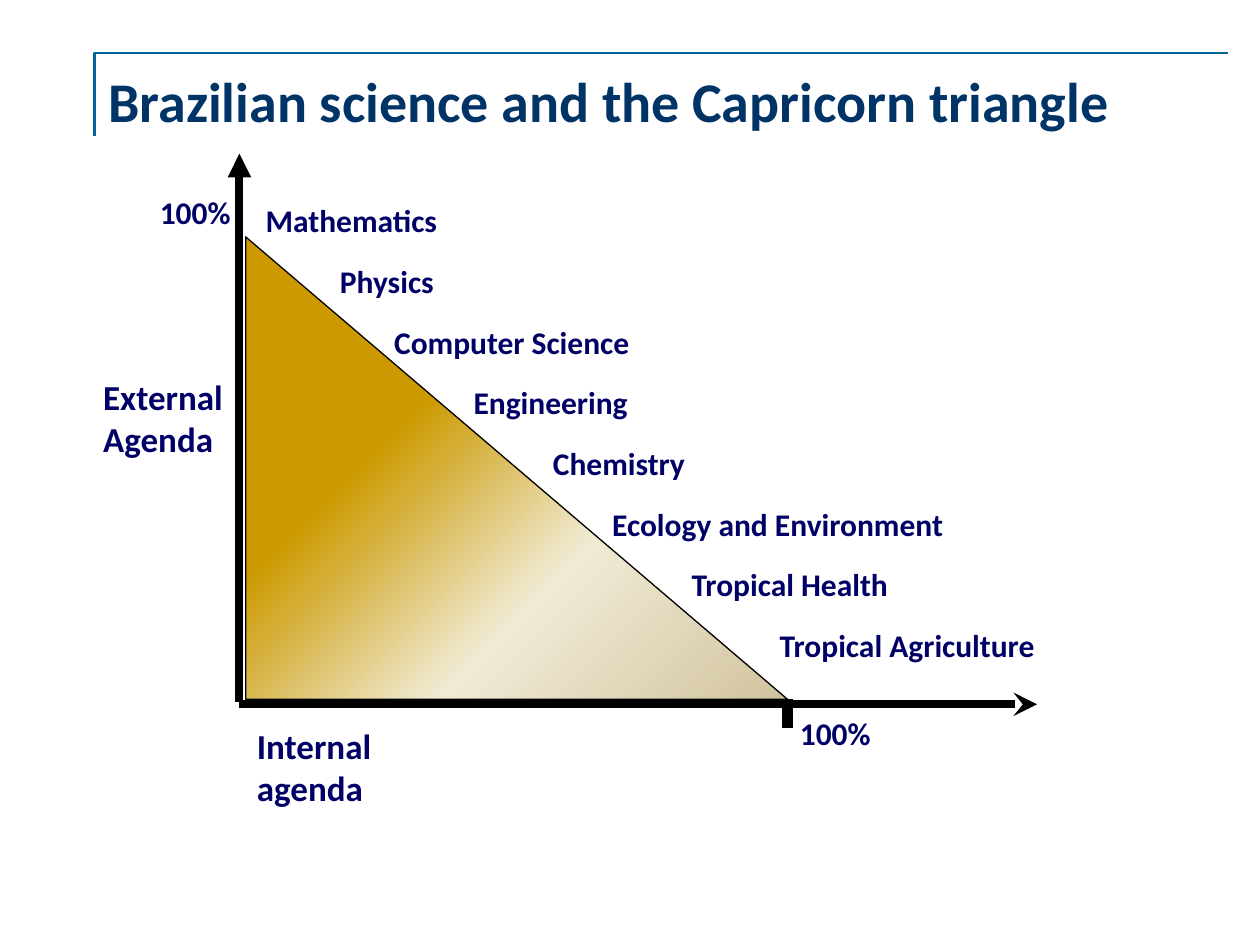
from lxml.etree import SubElement
from pptx import Presentation
from pptx.dml.color import RGBColor
from pptx.enum.shapes import MSO_CONNECTOR, MSO_SHAPE
from pptx.enum.text import MSO_ANCHOR, MSO_AUTO_SIZE, PP_ALIGN
from pptx.oxml.ns import qn
from pptx.util import Inches, Pt

COLORS = {
    "title": "003366",
    "frame": "006699",
    "label": "000066",
    "axis": "000000",
    "gold": "CC9900",
    "cream": "F0EBD5",
    "sand": "D1C39F",
}
GRADIENT = [(0, "gold"), (34, "gold"), (65, "cream"), (100, "sand")]
FIELDS = [
    ("Mathematics", 0.11, 1.58),
    ("Physics", 0.7, 0.96),
    ("Computer Science", 1.13, 2.1),
    ("Engineering", 1.76, 1.45),
    ("Chemistry", 2.39, 1.27),
    ("Ecology and Environment", 2.86, 2.87),
    ("Tropical Health", 3.49, 1.8),
    ("Tropical Agriculture", 4.19, 2.27),
]


def color(name):
    """Return the named palette color."""
    return RGBColor.from_string(COLORS[name])


def write_text(shape, text, size=18, fill="label", anchor=MSO_ANCHOR.TOP, wrap=False):
    """Write left-aligned bold lines into a shape."""
    frame = shape.text_frame
    frame.word_wrap = wrap
    frame.auto_size = MSO_AUTO_SIZE.NONE if wrap else MSO_AUTO_SIZE.SHAPE_TO_FIT_TEXT
    frame.vertical_anchor = anchor
    frame.text = text
    for para in frame.paragraphs:
        para.alignment = PP_ALIGN.LEFT
        para.font.name = "Calibri"
        para.font.size = Pt(size)
        para.font.bold = True
        para.font.color.rgb = color(fill)


def add_label(page, text, left, top, width, height=0.4, size=18):
    """Add a label that does not wrap."""
    box = page.shapes.add_textbox(Inches(left), Inches(top), Inches(width), Inches(height))
    write_text(box, text, size=size)


def add_line(page, start, end, width, head=None):
    """Add a straight axis line with an optional arrowhead at its end."""
    line = page.shapes.add_connector(
        MSO_CONNECTOR.STRAIGHT, *(Inches(value) for value in (*start, *end))
    )
    line.line.color.rgb = color("axis")
    line.line.width = Pt(width)
    if head:
        SubElement(line.line._get_or_add_ln(), qn("a:tailEnd"), type=head)
    SubElement(line._element.spPr, qn("a:effectLst"))


def add_title(page, left, top, width, height):
    """Draw the corner frame and place the title within it."""
    builder = page.shapes.build_freeform(Inches(left), Inches(top + height))
    builder.add_line_segments(
        [(Inches(left), Inches(top)), (Inches(left + width), Inches(top))], close=False
    )
    corner = builder.convert_to_shape()
    corner.shadow.inherit = False
    corner.fill.background()
    corner.line.color.rgb = color("frame")
    corner.line.width = Pt(1.5)

    title = page.shapes.title
    title.left, title.top = Inches(left + 0.01), Inches(top - 0.04)
    title.width, title.height = Inches(width + 0.24), Inches(0.83)
    write_text(title, "Brazilian science and the Capricorn triangle",
               size=32, fill="title", anchor=MSO_ANCHOR.MIDDLE, wrap=True)


def add_triangle(page, left, top, width, height):
    """Draw the right triangle with its diagonal gradient."""
    triangle = page.shapes.add_shape(
        MSO_SHAPE.RIGHT_TRIANGLE, Inches(left), Inches(top), Inches(width), Inches(height)
    )
    triangle.shadow.inherit = False
    triangle.line.color.rgb = color("axis")
    triangle.line.width = Pt(0.75)
    triangle.fill.gradient()
    triangle.fill.gradient_angle = 315
    stops = triangle._element.spPr.find(qn("a:gradFill")).find(qn("a:gsLst"))
    for stop in list(stops):
        stops.remove(stop)
    for position, name in GRADIENT:
        stop = SubElement(stops, qn("a:gs"), pos=str(position * 1000))
        SubElement(stop, qn("a:srgbClr"), val=COLORS[name])


def add_diagram(page, left, top, width, height):
    """Draw the axes, the triangle and their labels in the given box."""
    bottom = top + height
    axis_end = left + 4.35
    add_line(page, (left, bottom), (left + width, bottom), 4.5, head="stealth")
    add_line(page, (left, bottom - 0.02), (left, top), 4.5, head="triangle")
    add_triangle(page, left + 0.05, top + 0.66, 4.3, 3.67)
    add_line(page, (axis_end, bottom - 0.04), (axis_end, bottom + 0.19), 6)
    for index, (field, offset, label_width) in enumerate(FIELDS):
        add_label(page, field, left + offset, top + 0.33 + index * 3.37 / 7, label_width)
    add_label(page, "100%", left - 0.73, top + 0.26, 0.77)
    add_label(page, "100%", axis_end, bottom + 0.03, 0.77)
    add_label(page, "External\nAgenda", left - 1.18, top + 1.71, 1.15, height=0.77, size=20)
    add_label(page, "Internal agenda", left + 0.04, bottom + 0.11, 2.01, height=0.44, size=20)


def main():
    """Build and save the deck."""
    deck = Presentation()
    deck.slide_width, deck.slide_height = Inches(10), Inches(7.5)
    page = deck.slides.add_slide(deck.slide_layouts[5])
    add_title(page, 0.75, 0.42, 9, 0.66)
    add_diagram(page, 1.9, 1.22, 6.33, 4.37)
    deck.save("out.pptx")


if __name__ == "__main__":
    main()
